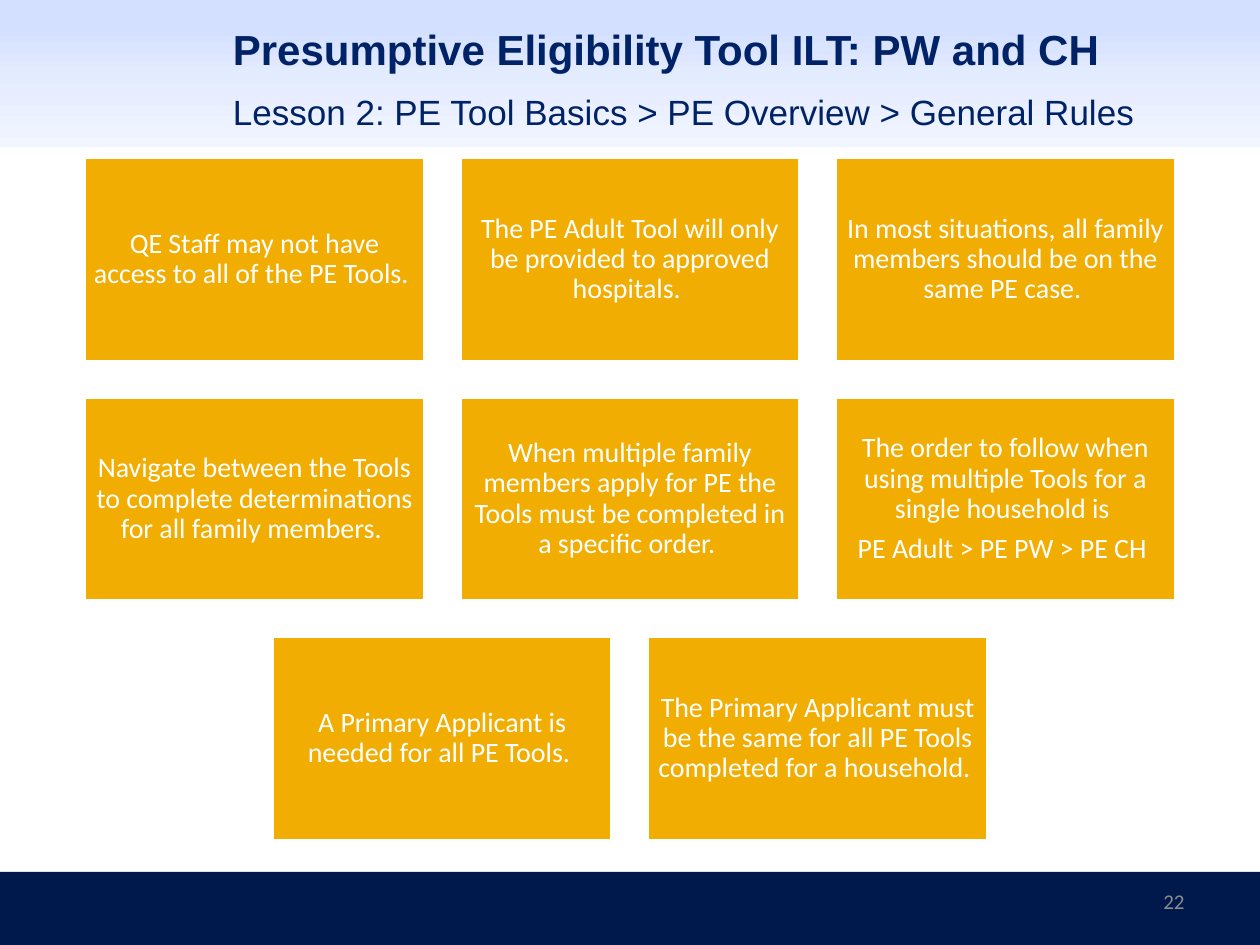
"""Build the slide of general rules for the Presumptive Eligibility tools."""
import copy

import pptx
import pptx.dml.color
import pptx.enum.shapes
import pptx.enum.text
import pptx.oxml.ns
import pptx.util

Inches = pptx.util.Inches
Pt = pptx.util.Pt
PP_ALIGN = pptx.enum.text.PP_ALIGN
ANCHOR = pptx.enum.text.MSO_ANCHOR

COLORS = {
    "navy": "002266",
    "footer": "00194D",
    "card": "F1AD02",
    "white": "FFFFFF",
    "number": "8C8C8C",
}
HEADER_STOPS = [(0.2, "D4E0FF"), (0.5, "E3EBFF"), (1.0, "F1F5FF")]

TITLE = "Presumptive Eligibility Tool ILT: PW and CH"
LESSON = "Lesson 2: PE Tool Basics > PE Overview > General Rules"
PAGE_NUMBER = "22"
RULE_ROWS = [
    [
        ["QE Staff may not have access to all of the PE Tools. "],
        ["The PE Adult Tool will only be provided to approved hospitals. "],
        ["In most situations, all family members should be on the same PE case. "],
    ],
    [
        ["Navigate between the Tools to complete determinations for all family members. "],
        ["When multiple family members apply for PE the Tools must be completed in a specific order. "],
        [
            "The order to follow when using multiple Tools for a single household is ",
            "PE Adult > PE PW > PE CH ",
        ],
    ],
    [
        ["A Primary Applicant is needed for all PE Tools. "],
        ["The Primary Applicant must be the same for all PE Tools completed for a household. "],
    ],
]

SLIDE_W, SLIDE_H = 10, 7.5
CARD_W, CARD_H, CARD_GAP, CARDS_TOP = 2.7, 1.62, 0.28, 1.25
CARD_INSET = 0.07


def rgb(hex_color):
    return pptx.dml.color.RGBColor.from_string(hex_color)


def add_rectangle(slide, left, top, width, height, color):
    rectangle = slide.shapes.add_shape(
        pptx.enum.shapes.MSO_SHAPE.RECTANGLE,
        Inches(left), Inches(top), Inches(width), Inches(height),
    )
    rectangle.shadow.inherit = False
    rectangle.fill.solid()
    rectangle.fill.fore_color.rgb = rgb(color)
    rectangle.line.fill.background()
    return rectangle


def write(frame, lines, size, font, color, align, anchor, bold=False):
    frame.word_wrap = True
    frame.vertical_anchor = anchor
    frame.text = "\n".join(lines)
    for paragraph in frame.paragraphs:
        paragraph.alignment = align
        for run in paragraph.runs:
            run.font.size = Pt(size)
            run.font.name = font
            run.font.bold = bold
            run.font.color.rgb = rgb(color)


def add_text(slide, left, top, width, height, text, *style, bold=False):
    box = slide.shapes.add_textbox(
        Inches(left), Inches(top), Inches(width), Inches(height)
    )
    write(box.text_frame, [text], *style, bold=bold)


def add_header(slide):
    header = add_rectangle(slide, 0, 0, SLIDE_W, 1.17, COLORS["white"])
    header.fill.gradient()
    header.fill.gradient_angle = 270
    stop_list = header._element.spPr.find(
        ".//" + pptx.oxml.ns.qn("a:gsLst")
    )
    stop_list.append(copy.deepcopy(stop_list[-1]))
    for stop, (position, color) in zip(header.fill.gradient_stops, HEADER_STOPS):
        stop.position = position
        stop.color.rgb = rgb(color)


def add_card(slide, left, top, lines):
    card = add_rectangle(slide, left, top, CARD_W, CARD_H, COLORS["card"])
    card.line.color.rgb = rgb(COLORS["white"])
    card.line.width = Pt(2)
    frame = card.text_frame
    frame.margin_left = frame.margin_right = Inches(CARD_INSET)
    frame.margin_top = frame.margin_bottom = Inches(CARD_INSET)
    write(frame, lines, 16, "Calibri", COLORS["white"], PP_ALIGN.CENTER, ANCHOR.MIDDLE)
    for paragraph in frame.paragraphs:
        paragraph.line_spacing = 0.9
        paragraph.space_after = Pt(5.6)


def add_cards(slide):
    for row, rules in enumerate(RULE_ROWS):
        row_width = len(rules) * (CARD_W + CARD_GAP) - CARD_GAP
        row_left = (SLIDE_W - row_width) / 2
        top = CARDS_TOP + row * (CARD_H + CARD_GAP)
        for column, lines in enumerate(rules):
            add_card(slide, row_left + column * (CARD_W + CARD_GAP), top, lines)


def main():
    deck = pptx.Presentation()
    deck.slide_width, deck.slide_height = Inches(SLIDE_W), Inches(SLIDE_H)
    slide = deck.slides.add_slide(deck.slide_layouts[6])
    add_rectangle(slide, 0, 6.92, SLIDE_W, 0.58, COLORS["footer"])
    add_header(slide)
    add_text(slide, 1.75, 0.08, 7.75, 0.62, TITLE, 24, "Arial", COLORS["navy"],
             PP_ALIGN.LEFT, ANCHOR.MIDDLE, bold=True)
    add_text(slide, 1.75, 0.67, 7.75, 0.5, LESSON, 20, "Arial", COLORS["navy"],
             PP_ALIGN.LEFT, ANCHOR.TOP)
    add_text(slide, 7.17, 6.95, 2.33, 0.4, PAGE_NUMBER, 12, "Calibri", COLORS["number"],
             PP_ALIGN.RIGHT, ANCHOR.MIDDLE)
    add_cards(slide)
    deck.save("out.pptx")


if __name__ == "__main__":
    main()
